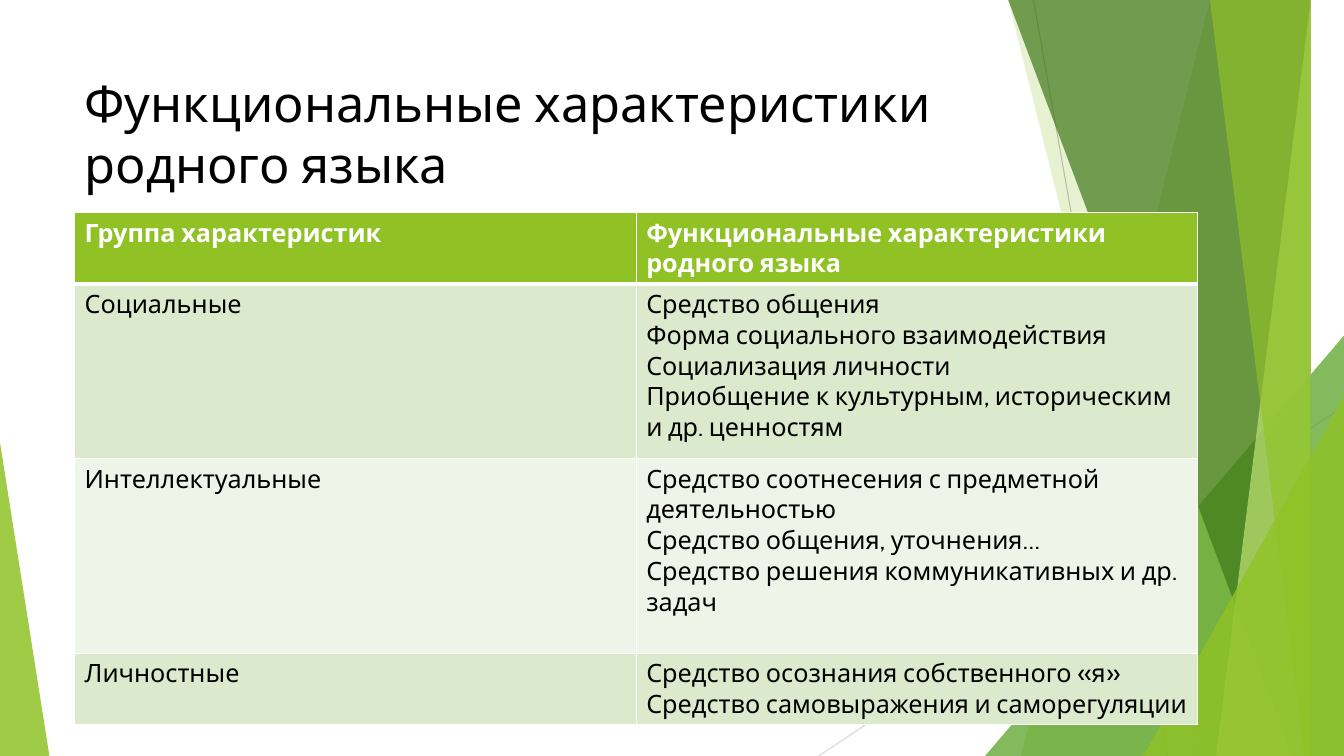
from lxml.etree import SubElement
from pptx import Presentation
from pptx.dml.color import RGBColor
from pptx.enum.shapes import MSO_CONNECTOR as Connector, MSO_SHAPE as Shape
from pptx.enum.text import MSO_ANCHOR as Anchor
from pptx.oxml.ns import qn
from pptx.util import Inches, Pt

WIDTH, HEIGHT = 13.33, 7.5
FONT = "Cabin"
COLORS = {
    "white": "FFFFFF",
    "black": "000000",
    "lime": "90C226",
    "green": "54A021",
    "forest": "3F7819",
    "pale lime": "C0E474",
    "gray": "BFBFBF",
    "light gray": "D9D9D9",
    "band": "DBE9CD",
    "light band": "EEF4E8",
}
TITLE = "Функциональные характеристики родного языка"
ROWS = [
    (0.71, "lime", ["Группа характеристик"], [TITLE]),
    (1.73, "band", ["Социальные"], [
        "Средство общения",
        "Форма социального взаимодействия",
        "Социализация личности",
        "Приобщение к культурным, историческим и др. ценностям",
    ]),
    (1.93, "light band", ["Интеллектуальные"], [
        "Средство соотнесения с предметной деятельностью",
        "Средство общения, уточнения…",
        "Средство решения коммуникативных и др. задач",
    ]),
    (0.71, "band", ["Личностные"], [
        "Средство осознания собственного «я»",
        "Средство самовыражения и саморегуляции",
    ]),
]


def color(name):
    return RGBColor.from_string(COLORS[name])


def add_line(slide, start, end, color_name):
    line = slide.shapes.add_connector(
        Connector.STRAIGHT, *(Inches(value) for value in (*start, *end)))
    line.line.color.rgb = color(color_name)
    line.line.width = Pt(0.75)
    SubElement(line._element.spPr, qn("a:effectLst"))


def paint(shape, color_name, opacity):
    shape.shadow.inherit = False
    shape.line.fill.background()
    shape.fill.solid()
    shape.fill.fore_color.rgb = color(color_name)
    solid_color = shape._element.spPr.find(qn("a:solidFill"))[0]
    SubElement(solid_color, qn("a:alpha"), val=str(opacity * 1000))


def add_ribbon(slide, top_left, bottom_left, color_name, opacity):
    builder = slide.shapes.build_freeform(top_left, 0, scale=Inches(1))
    builder.add_line_segments(
        [(WIDTH, 0), (WIDTH, HEIGHT), (bottom_left, HEIGHT)], close=True)
    paint(builder.convert_to_shape(), color_name, opacity)


def add_corner(slide, left, top, width, apex, color_name, opacity):
    corner = slide.shapes.add_shape(
        Shape.ISOSCELES_TRIANGLE, Inches(left), Inches(top),
        Inches(width), Inches(HEIGHT - top))
    corner.adjustments[0] = apex
    paint(corner, color_name, opacity)


def add_background(slide):
    add_line(slide, (10.25, 0), (11.58, HEIGHT), "gray")
    add_line(slide, (WIDTH, 4.03), (8.12, HEIGHT), "light gray")
    add_ribbon(slide, 12.28, 10.04, "lime", 30)
    add_ribbon(slide, 10.5, 11.83, "lime", 20)
    add_corner(slide, 9.77, 3.33, 3.56, 1, "green", 72)
    add_ribbon(slide, 10.21, 12.91, "forest", 70)
    add_ribbon(slide, 13.03, 11.92, "pale lime", 70)
    add_ribbon(slide, 11.96, 13.18, "lime", 65)
    add_corner(slide, 11.34, 3.93, 1.99, 1, "lime", 80)
    add_corner(slide, 0, 4.39, 0.49, 0, "lime", 85)


def write_text(frame, lines, size, color_name, bold=False):
    frame.text = "\n".join(lines)
    frame.word_wrap = True
    for paragraph in frame.paragraphs:
        paragraph.font.name = FONT
        paragraph.font.size = Pt(size)
        paragraph.font.bold = bold
        paragraph.font.color.rgb = color(color_name)


def add_title(slide):
    title = slide.shapes.add_textbox(
        Inches(0.74), Inches(0.67), Inches(9.4), Inches(1.44))
    title.text_frame.vertical_anchor = Anchor.TOP
    write_text(title.text_frame, [TITLE], 36, "black")


def set_borders(cell, widths):
    properties = cell._tc.get_or_add_tcPr()
    for index, (side, width) in enumerate(widths.items()):
        border = SubElement(properties, qn(f"a:{side}"), w=str(Pt(width)))
        fill = SubElement(border, qn("a:solidFill"))
        SubElement(fill, qn("a:srgbClr"), val=COLORS["white"])
        properties.insert(index, border)


def add_characteristics_table(slide):
    height = sum(row[0] for row in ROWS)
    table = slide.shapes.add_table(
        len(ROWS), 2, Inches(0.74), Inches(2.11), Inches(11.14), Inches(height)).table
    for row_index, (row_height, fill_name, *texts) in enumerate(ROWS):
        table.rows[row_index].height = Inches(row_height)
        is_header = row_index == 0
        widths = {
            "lnL": 1,
            "lnR": 1,
            "lnT": 3 if row_index == 1 else 1,
            "lnB": 3 if is_header else 1,
        }
        for column_index, lines in enumerate(texts):
            cell = table.cell(row_index, column_index)
            cell.fill.solid()
            cell.fill.fore_color.rgb = color(fill_name)
            write_text(cell.text_frame, lines, 18,
                       "white" if is_header else "black", is_header)
            set_borders(cell, widths)


def main():
    presentation = Presentation()
    presentation.slide_width = Inches(WIDTH)
    presentation.slide_height = Inches(HEIGHT)
    slide = presentation.slides.add_slide(presentation.slide_layouts[6])
    add_background(slide)
    add_title(slide)
    add_characteristics_table(slide)
    presentation.save("out.pptx")


if __name__ == "__main__":
    main()
